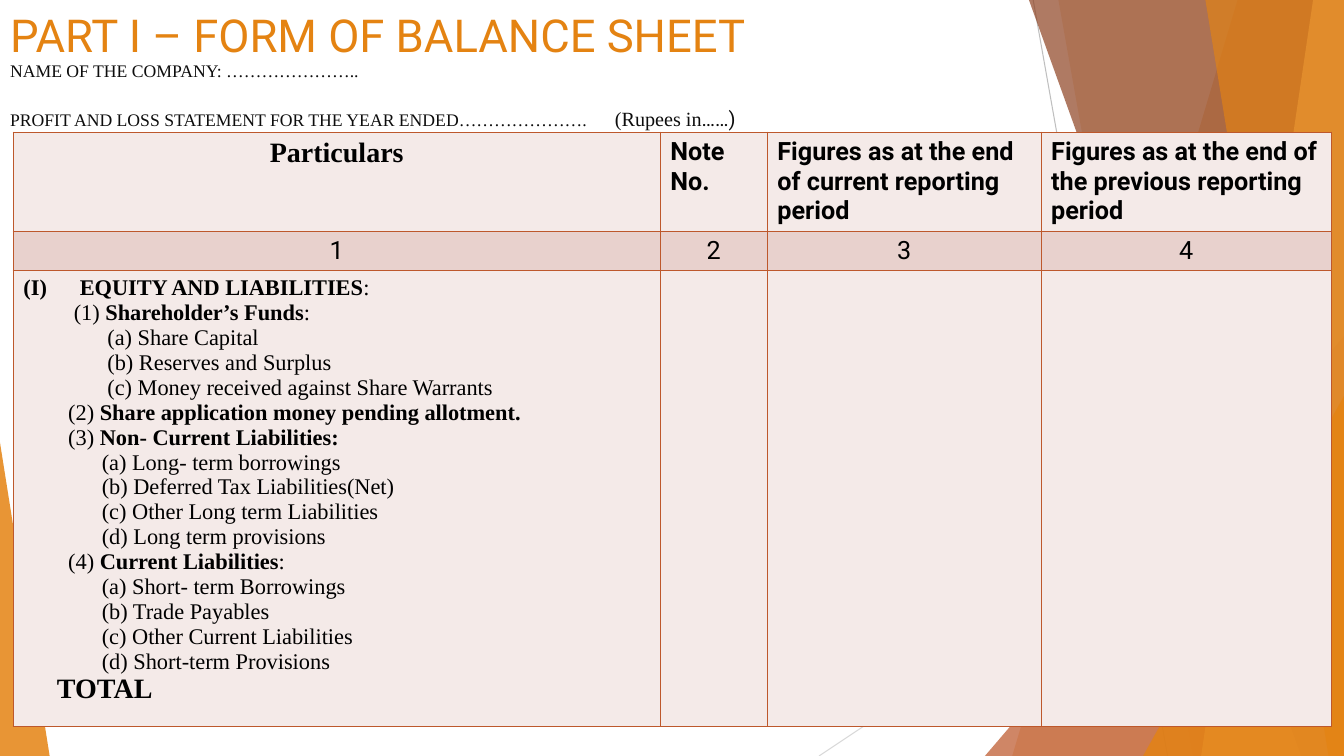
from pptx import Presentation
from pptx.dml.color import RGBColor as Rgb
from pptx.enum.shapes import MSO_CONNECTOR as Connector, MSO_SHAPE as Shape
from pptx.enum.text import MSO_ANCHOR as Anchor, MSO_AUTO_SIZE as AutoSize, PP_ALIGN as Align
from pptx.oxml.ns import qn
from pptx.util import Pt
from lxml.etree import SubElement

COLORS = {
    "orange": "E48312", "rust": "BD582C", "brown": "8E4221", "peach": "F3B56C",
    "gray": "BFBFBF", "silver": "D9D9D9", "ink": "0D0D0D", "black": "000000",
    "pale": "F4EAE8", "band": "E8D1CD",
}
SANS, SERIF = "Roboto", "Times New Roman"
WIDTH, HEIGHT = 960, 540

RAYS = [
    (884, 723, "orange", 30),
    (756, 852, "orange", 20),
    (735, 929.5, "brown", 70),
    (938, 858, "peach", 70),
    (861, 949, "orange", 65),
]
HEADERS = [
    "Particulars", "Note No.", "Figures as at the end of current reporting period",
    "Figures as at the end of the previous reporting period",
]
SECTIONS = [
    (36, 60, [("(1) ", False), ("Shareholder’s Funds", True), (":", False)],
     ["Share Capital", "Reserves and Surplus", "Money received against Share Warrants"]),
    (32, 56, [("(2)", False), (" Share application money pending allotment.", True)], []),
    (32, 56, [("(3)", False), (" Non- Current Liabilities:", True)],
     ["Long- term borrowings", "Deferred Tax Liabilities(Net)",
      "Other Long term Liabilities", "Long term provisions"]),
    (32, 56, [("(4) ", False), ("Current Liabilities", True), (":", False)],
     ["Short- term Borrowings", "Trade Payables",
      "Other Current Liabilities", "Short-term Provisions"]),
]


class SlideBuilder:
    def __init__(self, deck):
        self.page = deck.slides.add_slide(deck.slide_layouts[5])
        self.shapes = self.page.shapes

    def color(self, name):
        return Rgb.from_string(COLORS[name])

    def line(self, start, end, color):
        line = self.shapes.add_connector(
            Connector.STRAIGHT, *(Pt(value) for value in start + end))
        line.line.color.rgb = self.color(color)
        line.line.width = Pt(0.75)
        SubElement(line._element.spPr, qn("a:effectLst"))

    def paint(self, shape, color, opacity):
        shape.shadow.inherit = False
        shape.line.fill.background()
        shape.fill.solid()
        shape.fill.fore_color.rgb = self.color(color)
        tint = shape._element.spPr.find(qn("a:solidFill"))[0]
        SubElement(tint, qn("a:alpha"), val=str(opacity * 1000))

    def ray(self, top, bottom, color, opacity):
        builder = self.shapes.build_freeform(Pt(top), 0, scale=1.0)
        corners = [(WIDTH, 0), (WIDTH, HEIGHT), (bottom, HEIGHT)]
        builder.add_line_segments([(Pt(x), Pt(y)) for x, y in corners])
        self.paint(builder.convert_to_shape(), color, opacity)

    def triangle(self, left, top, width, apex, color, opacity):
        shape = self.shapes.add_shape(
            Shape.ISOSCELES_TRIANGLE, Pt(left), Pt(top), Pt(width), Pt(HEIGHT - top))
        shape.adjustments[0] = apex
        self.paint(shape, color, opacity)

    def span(self, para, text, size, font, color="black", bold=False):
        run = para.add_run()
        run.text = text
        run.font.size = Pt(size)
        run.font.name = font
        run.font.bold = bold
        run.font.color.rgb = self.color(color)

    def para(self, frame, first, pitch, left=0, hanging=0):
        para = frame.paragraphs[0] if first else frame.add_paragraph()
        para.line_spacing = Pt(pitch)
        para.space_before = para.space_after = Pt(0)
        para.alignment = Align.LEFT
        props = para._p.get_or_add_pPr()
        props.set("marL", str(Pt(left)))
        props.set("indent", str(Pt(-hanging)))
        return para

    def title(self, lines, tab):
        box = self.shapes.title
        box.left, box.top, box.width, box.height = Pt(0), Pt(0), Pt(941), Pt(36.7)
        self.shapes._spTree.append(box._element)
        frame = box.text_frame
        frame.word_wrap = True
        frame.auto_size = AutoSize.NONE
        frame.vertical_anchor = Anchor.TOP
        for index, (pitch, spans) in enumerate(lines):
            para = self.para(frame, index == 0, pitch)
            tabs = SubElement(para._p.get_or_add_pPr(), qn("a:tabLst"))
            SubElement(tabs, qn("a:tab"), pos=str(Pt(tab)), algn="l")
            for span in spans:
                self.span(para, *span)

    def table(self, left, top, widths, heights):
        frame = self.shapes.add_table(
            len(heights), len(widths), Pt(left), Pt(top), Pt(sum(widths)), Pt(sum(heights)))
        table = frame.table
        for column, width in zip(table.columns, widths):
            column.width = Pt(width)
        for index, height in enumerate(heights):
            table.rows[index].height = Pt(height)
            for cell in table.rows[index].cells:
                self.cell(cell, "band" if index == 1 else "pale")
        return table

    def cell(self, cell, fill):
        props = cell._tc.get_or_add_tcPr()
        for side in ("a:lnL", "a:lnR", "a:lnT", "a:lnB"):
            border = SubElement(props, qn(side), w=str(Pt(1)))
            paint = SubElement(border, qn("a:solidFill"))
            SubElement(paint, qn("a:srgbClr"), val=COLORS["rust"])
        cell.fill.solid()
        cell.fill.fore_color.rgb = self.color(fill)

    def label(self, cell, text, size, font, bold, align):
        para = cell.text_frame.paragraphs[0]
        para.alignment = align
        self.span(para, text, size, font, bold=bold)

    def outline(self, cell, heading, sections, total):
        frame, pitch = cell.text_frame, 17.76
        para = self.para(frame, True, pitch, 40.3, 40.3)
        SubElement(para._p.get_or_add_pPr(), qn("a:buAutoNum"), type="romanUcParenBoth")
        self.span(para, heading, 16, SERIF, bold=True)
        self.span(para, ":", 16, SERIF)
        for indent, item_indent, spans, items in sections:
            para = self.para(frame, False, pitch, indent)
            for text, bold in spans:
                self.span(para, text, 16, SERIF, bold=bold)
            for letter, item in zip("abcd", items):
                para = self.para(frame, False, pitch, item_indent)
                self.span(para, f"({letter}) {item}", 16, SERIF)
        self.span(self.para(frame, False, 22, 24), total, 20, SERIF, bold=True)


def main():
    deck = Presentation()
    deck.slide_width, deck.slide_height = Pt(WIDTH), Pt(HEIGHT)
    slide = SlideBuilder(deck)

    slide.line((738, 0), (834, HEIGHT), "gray")
    slide.line((WIDTH, 290), (585, HEIGHT), "silver")
    for ray in RAYS[:2]:
        slide.ray(*ray)
    slide.triangle(703.5, 240, 256.5, 1, "rust", 72)
    for ray in RAYS[2:]:
        slide.ray(*ray)
    slide.triangle(816.5, 283, 143.5, 1, "orange", 80)
    slide.triangle(0, 316, 35.5, 0, "orange", 85)

    slide.title([
        (40.7, [("PART I – FORM OF BALANCE SHEET", 32.4, SANS, "orange")]),
        (13.4, [("NAME OF THE COMPANY: …………………..", 12.6, SERIF, "ink")]),
        (35.8, [("PROFIT AND LOSS STATEMENT FOR THE YEAR ENDED………………….\t",
                 12.6, SERIF, "ink"),
                ("(Rupees in", 14.4, SERIF, "ink"),
                ("……)", 14.4, SANS, "ink")]),
    ], 660.7)

    table = slide.table(9.5, 94.5, [462.2, 76.4, 195.6, 207.2], [70.5, 28.4, 325.6])
    for index, header in enumerate(HEADERS):
        size, font, align = (18, SANS, Align.LEFT) if index else (20, SERIF, Align.CENTER)
        slide.label(table.cell(0, index), header, size, font, True, align)
        slide.label(table.cell(1, index), str(index + 1), 18, SANS, False, Align.CENTER)
    slide.outline(table.cell(2, 0), "EQUITY AND LIABILITIES", SECTIONS, "TOTAL")
    deck.save("out.pptx")


if __name__ == "__main__":
    main()
